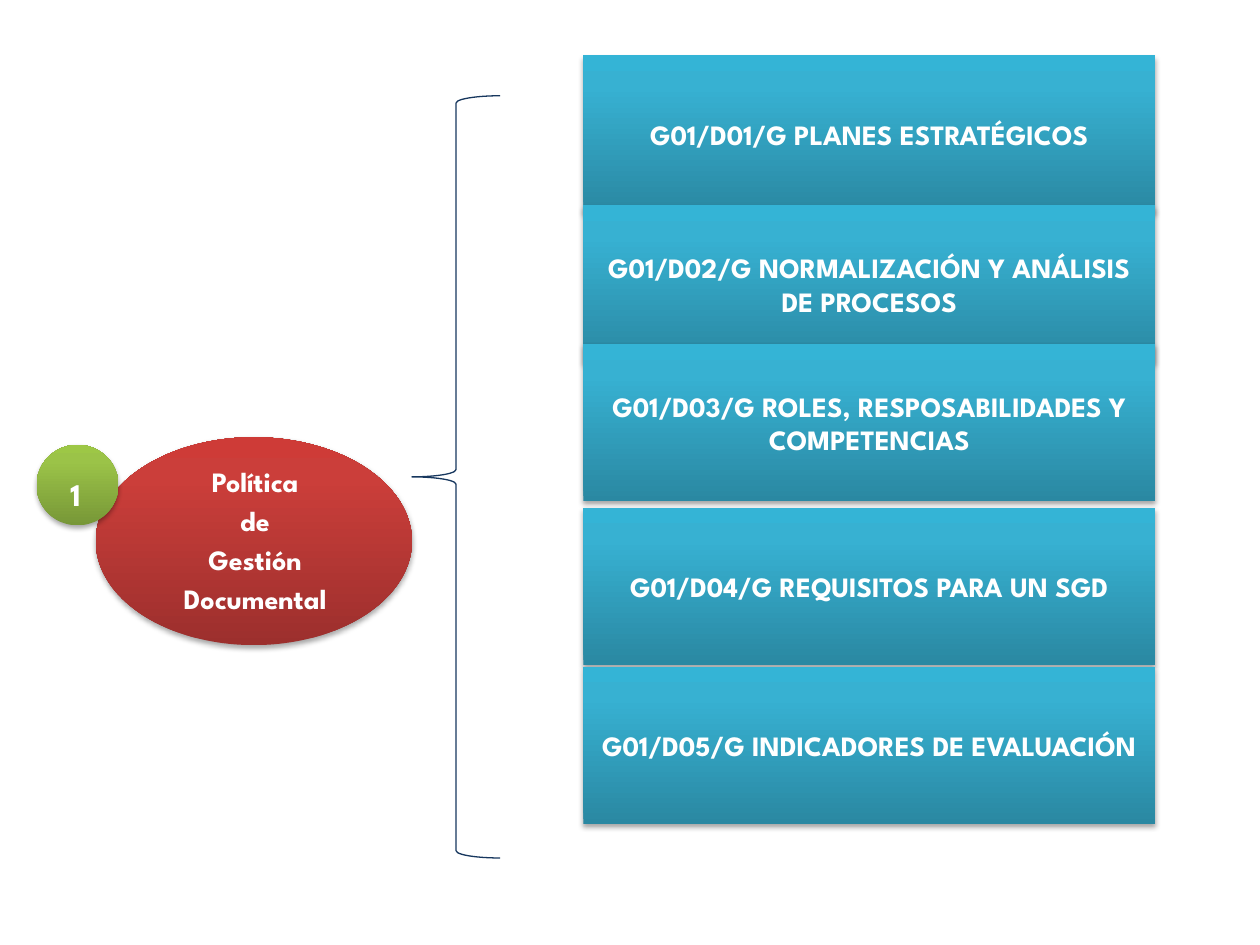
import pptx
import pptx.dml.color
import pptx.enum.shapes
import pptx.enum.text
import pptx.oxml
import pptx.oxml.ns
import pptx.util

Inches = pptx.util.Inches
Pt = pptx.util.Pt
Shapes = pptx.enum.shapes.MSO_SHAPE
Anchor = pptx.enum.text.MSO_ANCHOR
Align = pptx.enum.text.PP_ALIGN

# Guideline text and the top of its block
GUIDELINES = [
    ("G01/D01/G PLANES ESTRATÉGICOS", 0.44),
    ("G01/D02/G NORMALIZACIÓN Y ANÁLISIS DE PROCESOS", 1.63),
    ("G01/D03/G ROLES, RESPOSABILIDADES Y COMPETENCIAS", 2.73),
    ("G01/D04/G REQUISITOS PARA UN SGD", 4.03),
    ("G01/D05/G INDICADORES DE EVALUACIÓN", 5.29),
]
POLICY = ["Política", "de", "Gestión", "Documental"]
NUMBER = ["1"]

BLOCK_LEFT, BLOCK_WIDTH, BLOCK_HEIGHT = 4.63, 4.54, 1.25

THEME = {
    "font": "League Spartan",
    "text": "FFFFFF",
    "text_size": 16,
    "number_size": 18,
    "brace": "17375E",
    "shadow": "000000",
    # Gradient colours from the bottom edge upwards
    "blue": ("2A88A2", "37B1D2", "34B4D6"),
    "red": ("9C2F2D", "CB3E3A", "CE3B37"),
    "green": ("779737", "9BC348", "9DC746"),
}
GRADIENT_POSITIONS = (0, 80000, 100000)


def add_glossy_shape(shapes, kind, box, colors):
    """Add a borderless shape with a vertical gradient and a soft shadow below."""
    shape = shapes.add_shape(kind, *map(Inches, box))
    shape.line.fill.background()
    namespace = pptx.oxml.ns.nsdecls("a")
    stops = "".join(
        f'<a:gs pos="{position}"><a:srgbClr val="{color}"/></a:gs>'
        for position, color in zip(GRADIENT_POSITIONS, colors)
    )
    gradient = pptx.oxml.parse_xml(
        f'<a:gradFill {namespace} rotWithShape="1"><a:gsLst>{stops}</a:gsLst>'
        '<a:lin ang="16200000" scaled="0"/></a:gradFill>'
    )
    effects = pptx.oxml.parse_xml(
        f'<a:effectLst {namespace}><a:outerShdw blurRad="{Pt(3.1)}" '
        f'dist="{Pt(1.8)}" dir="5400000" rotWithShape="0">'
        f'<a:srgbClr val="{THEME["shadow"]}"><a:alpha val="35000"/></a:srgbClr>'
        "</a:outerShdw></a:effectLst>"
    )
    line = shape.line._get_or_add_ln()
    line.addprevious(gradient)
    line.addnext(effects)
    return shape


def write_text(shape, lines, size, align=Align.CENTER, anchor=Anchor.TOP,
               line_spacing=None, space_after=None):
    frame = shape.text_frame
    frame.word_wrap = True
    frame.vertical_anchor = anchor
    for index, line in enumerate(lines):
        paragraph = frame.add_paragraph() if index else frame.paragraphs[0]
        paragraph.alignment = align
        paragraph.line_spacing = line_spacing
        paragraph.space_after = space_after
        run = paragraph.add_run()
        run.text = line
        run.font.name = THEME["font"]
        run.font.size = Pt(size)
        run.font.bold = True
        run.font.color.rgb = pptx.dml.color.RGBColor.from_string(THEME["text"])


def add_labelled_ellipse(slide, box, colors, label_box, lines, size, **text_format):
    """Group an ellipse with the text box that lies on it."""
    group = slide.shapes.add_group_shape()
    add_glossy_shape(group.shapes, Shapes.OVAL, box, colors)
    label = group.shapes.add_textbox(*map(Inches, label_box))
    write_text(label, lines, size, **text_format)


def add_brace(slide, box):
    brace = slide.shapes.add_shape(Shapes.RIGHT_BRACE, *map(Inches, box))
    brace.shadow.inherit = False
    brace.fill.background()
    brace.line.color.rgb = pptx.dml.color.RGBColor.from_string(THEME["brace"])
    brace.line.width = Pt(0.75)
    brace._element.spPr.xfrm.set("flipH", "1")


def main():
    presentation = pptx.Presentation()
    presentation.slide_width = Inches(10)
    presentation.slide_height = Inches(7.5)
    slide = presentation.slides.add_slide(presentation.slide_layouts[6])

    for text, top in GUIDELINES:
        block = add_glossy_shape(
            slide.shapes, Shapes.RECTANGLE,
            (BLOCK_LEFT, top, BLOCK_WIDTH, BLOCK_HEIGHT), THEME["blue"],
        )
        write_text(block, [text], THEME["text_size"], anchor=Anchor.MIDDLE)

    add_labelled_ellipse(
        slide, (0.76, 3.47, 2.51, 1.65), THEME["red"],
        (1.05, 3.67, 1.95, 1.15), POLICY, THEME["text_size"],
        line_spacing=0.9, space_after=Pt(5),
    )
    add_brace(slide, (3.27, 0.76, 0.7, 6.05))
    add_labelled_ellipse(
        slide, (0.29, 3.53, 0.65, 0.64), THEME["green"],
        (0.46, 3.72, 0.3, 0.4), NUMBER, THEME["number_size"], align=Align.LEFT,
    )

    presentation.save("out.pptx")


if __name__ == "__main__":
    main()
